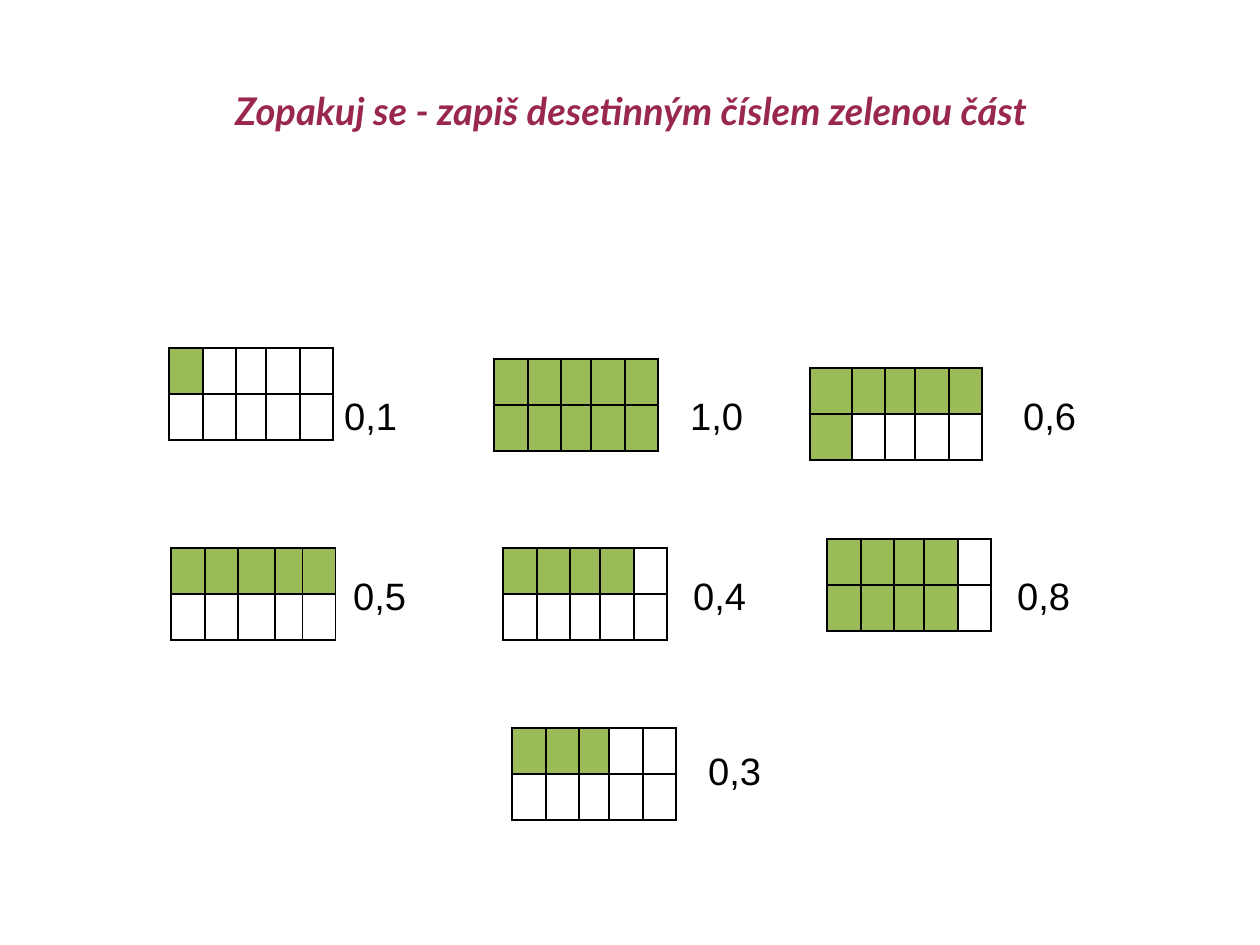
from lxml import etree
from pptx import Presentation
from pptx import util as u
from pptx.dml.color import RGBColor
from pptx.enum import text
from pptx.oxml import ns

PX = 8000  # EMU per px
GREEN = RGBColor(0x9B, 0xBB, 0x59)
WHITE = RGBColor(0xFF, 0xFF, 0xFF)
BLACK = RGBColor(0, 0, 0)
WINE = RGBColor(0x99, 0x28, 0x4C)

ROW = 46
COLS = (34, 33, 30, 34, 33)
WIDE = (42, 33, 30, 34, 33)
MIXED = (34, 33, 37, 27, 33)

# label, label box, grid corner, green cells in each row, column widths
TASKS = [
    ("0,1", (333, 387, 135, 54), (169, 348), (1, 0), COLS),
    ("1,0", (679, 387, 135, 54), (494, 359), (5, 5), COLS),
    ("0,6", (1012, 387, 135, 54), (810, 368), (5, 1), WIDE),
    ("0,5", (342, 567, 144, 54), (171, 548), (5, 0), MIXED),
    ("0,4", (682, 567, 99, 54), (503, 548), (4, 0), COLS),
    ("0,8", (1006, 567, 144, 54), (827, 539), (4, 4), COLS),
    ("0,3", (697, 742, 117, 54), (512, 728), (3, 0), COLS),
]


def emu(*lens):
    return [u.Emu(n * PX) for n in lens]


def write(slide, box, words, face, color):
    frame = slide.shapes.add_textbox(*emu(*box)).text_frame
    frame.word_wrap = True
    frame.text = words
    font = frame.paragraphs[0].runs[0].font
    font.name, font.size = face, u.Pt(24)
    font.color.rgb = color
    return frame


def title(slide, box):
    frame = write(slide, box, "Zopakuj se - zapiš desetinným číslem zelenou část",
                  "Lato", WINE)
    frame.margin_left = frame.margin_right = 0
    frame.margin_top = frame.margin_bottom = 0
    frame.vertical_anchor = text.MSO_ANCHOR.MIDDLE
    line = frame.paragraphs[0]
    line.alignment = text.PP_ALIGN.CENTER
    line.runs[0].font.bold = line.runs[0].font.italic = True


def border(cell):
    props = cell._tc.get_or_add_tcPr()
    for i, side in enumerate(("a:lnL", "a:lnR", "a:lnT", "a:lnB")):
        line = etree.Element(ns.qn(side), w=str(u.Pt(1)))
        fill = etree.SubElement(line, ns.qn("a:solidFill"))
        etree.SubElement(fill, ns.qn("a:srgbClr"), val=str(BLACK))
        props.insert(i, line)


def grid(slide, box, greens, cols):
    """Draw a table whose rows start with the given numbers of green cells."""
    table = slide.shapes.add_table(len(greens), len(cols), *emu(*box)).table
    table.first_row = table.horz_banding = False
    for col, width in zip(table.columns, cols):
        col.width = u.Emu(width * PX)
    for r, green in enumerate(greens):
        table.rows[r].height = u.Emu(ROW * PX)
        for c in range(len(cols)):
            cell = table.cell(r, c)
            cell.margin_top = cell.margin_bottom = 0
            cell.fill.solid()
            cell.fill.fore_color.rgb = GREEN if c < green else WHITE
            border(cell)


def main():
    deck = Presentation()
    deck.slide_width, deck.slide_height = emu(1260, 945)
    slide = deck.slides.add_slide(deck.slide_layouts[6])
    title(slide, (93, 39, 1076, 142))
    for label, box, spot, greens, cols in TASKS:
        write(slide, box, label, "Arial", BLACK)
        grid(slide, (*spot, sum(cols), ROW * len(greens)), greens, cols)
    deck.save("out.pptx")


if __name__ == "__main__":
    main()
